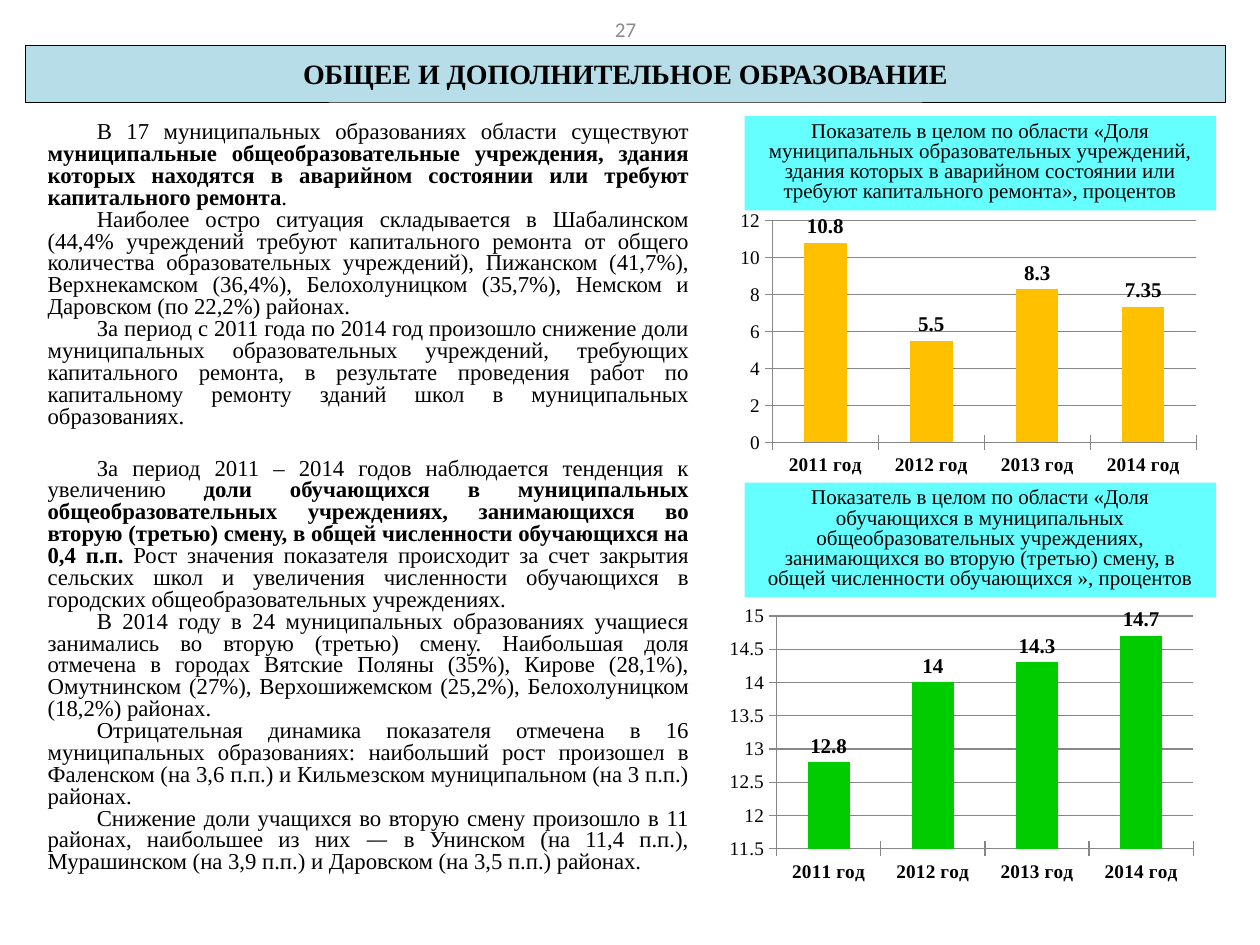
from dataclasses import dataclass

from lxml import etree
from pptx import Presentation
from pptx import util as u
from pptx.chart import data as cd
from pptx.dml.color import RGBColor
from pptx.enum import chart as ce, shapes, text
from pptx.oxml import ns


@dataclass(frozen=True)
class Theme:
    font: str = "Times New Roman"
    plain: str = "Calibri"
    dash: str = "Vollkorn"
    ink: str = "000000"
    grey: str = "8C8C8C"
    rule: str = "878787"
    band: str = "B7DEE8"
    note: str = "66FFFF"
    gold: str = "FFC000"
    green: str = "00CC00"
    head: int = 16
    body: int = 13
    small: int = 12
    tick: int = 11


@dataclass(frozen=True)
class Box:
    col: float
    row: float
    wide: float
    high: float


@dataclass(frozen=True)
class Run:
    text: str
    bold: bool = False
    font: str = ""


@dataclass(frozen=True)
class Style:
    size: int
    align: text.PP_ALIGN = text.PP_ALIGN.CENTER
    lead: float = 0.8
    indent: float = 0
    before: float = 0
    color: str = Theme.ink
    font: str = Theme.font


@dataclass(frozen=True)
class Plot:
    box: Box
    inner: tuple
    values: tuple
    low: float
    high: float
    step: float
    color: str


T = Theme()
COLS, ROWS = 100, 75
YEARS = [f"{year} год" for year in range(2011, 2015)]
LEFT, WIDE = 2.8, 52.8
SIDE, SPAN = 59.1, 37.4
TOP = 9.2

MID = Style(T.small)
HEAD = Style(T.head, lead=1)
PAGE = Style(T.small, before=2.4, color=T.grey, font=T.plain)
BODY = Style(T.body, text.PP_ALIGN.JUSTIFY, indent=3.9)
TREND = Style(T.body, text.PP_ALIGN.JUSTIFY, indent=3.9, before=2.6)

REPAIR = [
    [Run("В 17 муниципальных образованиях области существуют "),
     Run("муниципальные общеобразовательные учреждения, здания которых находятся "
         "в аварийном состоянии или требуют капитального ремонта", True),
     Run(".")],
    [Run("Наиболее остро ситуация складывается в Шабалинском (44,4% учреждений требуют "
         "капитального ремонта от общего количества образовательных учреждений), "
         "Пижанском (41,7%), Верхнекамском (36,4%), Белохолуницком (35,7%), Немском и "
         "Даровском (по 22,2%) районах.")],
    [Run("За период с 2011 года по 2014 год произошло снижение доли муниципальных "
         "образовательных учреждений, требующих капитального ремонта, в результате "
         "проведения работ по капитальному ремонту зданий школ в муниципальных "
         "образованиях.")],
]
SHIFT = [
    [Run("За период 2011 – 2014 годов наблюдается тенденция к увеличению "),
     Run("доли обучающихся в муниципальных общеобразовательных учреждениях, занимающихся "
         "во вторую (третью) смену, в общей численности обучающихся на 0,4 п.п. ", True),
     Run("Рост значения показателя происходит за счет закрытия сельских школ и увеличения "
         "численности обучающихся в городских общеобразовательных учреждениях.")],
    [Run("В 2014 году в 24 муниципальных образованиях учащиеся занимались во вторую "
         "(третью) смену. Наибольшая доля отмечена в городах Вятские Поляны (35%), Кирове "
         "(28,1%), Омутнинском (27%), Верхошижемском (25,2%), Белохолуницком (18,2%) "
         "районах.")],
    [Run("Отрицательная динамика показателя отмечена в 16 муниципальных образованиях: "
         "наибольший рост произошел в Фаленском (на 3,6 п.п.) и Кильмезском муниципальном "
         "(на 3 п.п.) районах.")],
    [Run("Снижение доли учащихся во вторую смену произошло в 11 районах, наибольшее из них "),
     Run("—", font=T.dash),
     Run(" в Унинском (на 11,4 п.п.), Мурашинском (на 3,9 п.п.) и Даровском "
         "(на 3,5 п.п.) районах.")],
]
NOTES = [
    (Box(SIDE, TOP, SPAN, 7.5),
     "Показатель в целом по области «Доля муниципальных образовательных учреждений, здания "
     "которых в аварийном состоянии или требуют капитального ремонта», процентов"),
    (Box(SIDE, 38.3, SPAN, 9.1),
     "Показатель в целом по области «Доля обучающихся в муниципальных общеобразовательных "
     "учреждениях, занимающихся во вторую (третью) смену, в общей численности "
     "обучающихся », процентов"),
]
PLOTS = [
    Plot(Box(55.9, 47.7, 44.1, 23.7), (0.13, 0.05, 0.75, 0.78),
         (12.8, 14, 14.3, 14.7), 11.5, 15, 0.5, T.green),
    Plot(Box(57.9, 16.2, 37.8, 22), (0.09, 0.06, 0.89, 0.8),
         (10.8, 5.5, 8.3, 7.35), 0, 12, 2, T.gold),
]

deck = Presentation()
deck.slide_width, deck.slide_height = u.Inches(10), u.Inches(7.5)
slide = deck.slides.add_slide(deck.slide_layouts[6])


def across(cols: float) -> int:
    return round(deck.slide_width * cols / COLS)


def place(box: Box) -> tuple:
    down = deck.slide_height / ROWS
    return across(box.col), round(box.row * down), across(box.wide), round(box.high * down)


def tint(font, size: int, color: str = T.ink, name: str = T.font, bold: bool = False) -> None:
    font.size, font.name, font.bold = u.Pt(size), name, bold
    font.color.rgb = RGBColor.from_string(color)


def write(shape, paras: list, style: Style, anchor=text.MSO_ANCHOR.TOP) -> None:
    frame = shape.text_frame
    frame.word_wrap, frame.vertical_anchor = True, anchor
    for num, runs in enumerate(paras):
        para = frame.add_paragraph() if num else frame.paragraphs[0]
        para.alignment, para.line_spacing = style.align, style.lead
        para.space_before = u.Pt(0 if num else style.before)
        if style.indent:
            props = para._p.get_or_add_pPr()
            props.set("marL", "0")
            props.set("indent", str(across(style.indent)))
        for item in runs:
            run = para.add_run()
            run.text = item.text
            tint(run.font, style.size, style.color, item.font or style.font, item.bold)


def label(box: Box, paras: list, style: Style, anchor=text.MSO_ANCHOR.TOP) -> None:
    write(slide.shapes.add_textbox(*place(box)), paras, style, anchor)


def panel(box: Box, fill: str, paras: list, style: Style, anchor=text.MSO_ANCHOR.TOP):
    shape = slide.shapes.add_shape(shapes.MSO_SHAPE.RECTANGLE, *place(box))
    shape.shadow.inherit = False
    shape.fill.solid()
    shape.fill.fore_color.rgb = RGBColor.from_string(fill)
    shape.line.fill.background()
    write(shape, paras, style, anchor)
    return shape


def edge(line, color: str, width: float) -> None:
    line.color.rgb = RGBColor.from_string(color)
    line.width = u.Pt(width)


def draw(plot: Plot) -> None:
    data = cd.CategoryChartData()
    data.categories = YEARS
    data.add_series("Series 1", plot.values)
    chart = slide.shapes.add_chart(
        ce.XL_CHART_TYPE.COLUMN_CLUSTERED, *place(plot.box), data).chart
    chart.has_legend = chart.has_title = False
    tint(chart.font, T.tick)
    for axis, bold in ((chart.category_axis, True), (chart.value_axis, False)):
        tint(axis.tick_labels.font, T.tick, bold=bold)
        axis.major_tick_mark = ce.XL_TICK_MARK.CROSS
        edge(axis.format.line, T.rule, 0.75)
    scale = chart.value_axis
    scale.minimum_scale, scale.maximum_scale = plot.low, plot.high
    scale.major_unit = plot.step
    edge(scale.major_gridlines.format.line, T.rule, 0.75)
    bars = chart.plots[0]
    bars.gap_width, bars.vary_by_categories = 150, False
    fill = bars.series[0].format.fill
    fill.solid()
    fill.fore_color.rgb = RGBColor.from_string(plot.color)
    bars.has_data_labels = True
    tags = bars.data_labels
    tags.show_value, tags.position = True, ce.XL_LABEL_POSITION.OUTSIDE_END
    tint(tags.font, T.small, bold=True)
    area = chart._chartSpace.chart.plotArea
    for old in area.findall(ns.qn("c:layout")):
        area.remove(old)
    layout = etree.Element(ns.qn("c:layout"))
    area.insert(0, layout)
    manual = etree.SubElement(layout, ns.qn("c:manualLayout"))
    marks = {"layoutTarget": "inner", "xMode": "edge", "yMode": "edge"}
    marks.update(zip("xywh", plot.inner))
    for key, val in marks.items():
        etree.SubElement(manual, ns.qn(f"c:{key}")).set("val", str(val))


def main() -> None:
    mid = text.MSO_ANCHOR.MIDDLE
    label(Box(1.2, 0.5, 96.9, 4), [[Run("27")]], PAGE, mid)
    title = [[Run("ОБЩЕЕ И ДОПОЛНИТЕЛЬНОЕ ОБРАЗОВАНИЕ", True)]]
    edge(panel(Box(2, 3.6, 95.3, 4.5), T.band, title, HEAD, mid).line, T.ink, 0.5)
    label(Box(LEFT, TOP, WIDE, 25.5), REPAIR, BODY)
    label(Box(LEFT, 35.9, WIDE, 34.3), SHIFT, TREND)
    for box, words in NOTES:
        panel(box, T.note, [[Run(words)]], MID)
    for plot in PLOTS:
        draw(plot)
    deck.save("out.pptx")


if __name__ == "__main__":
    main()
